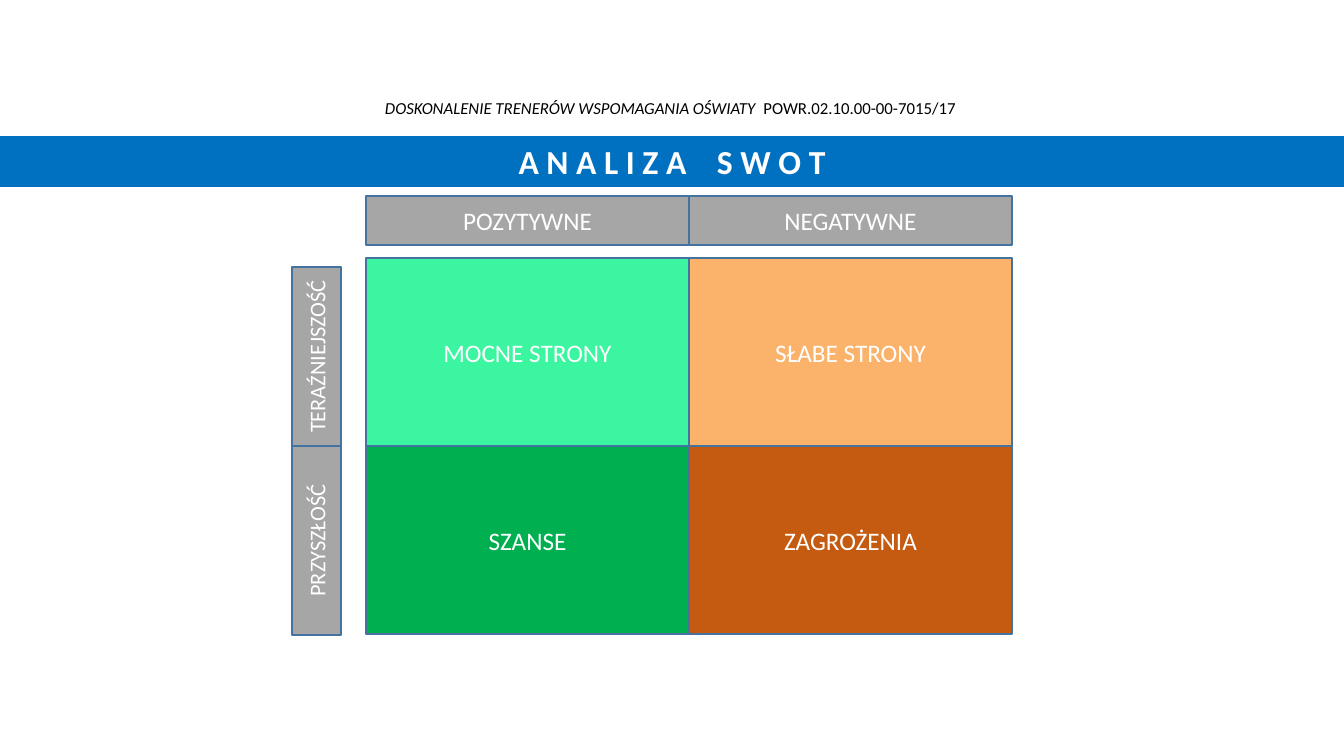
from pptx import Presentation, util as u
from pptx.dml.color import RGBColor
from pptx.enum import shapes, text

WHITE = RGBColor(0xFF, 0xFF, 0xFF)
BLACK = RGBColor(0, 0, 0)
BLUE = RGBColor(0x00, 0x70, 0xC0)
OUTLINE = RGBColor(0x43, 0x73, 0x9E)
GREY = RGBColor(0xA6, 0xA6, 0xA6)
MINT = RGBColor(0x3B, 0xF5, 0xA1)
GREEN = RGBColor(0x00, 0xB0, 0x50)
PEACH = RGBColor(0xFB, 0xB3, 0x6B)
RUST = RGBColor(0xC5, 0x5A, 0x11)

FONT = "Calibri"
PROJECT = [
    ("DOSKONALENIE TRENERÓW WSPOMAGANIA OŚWIATY", {"italic": True}),
    (" ", {"spacing": 2.7}),
    ("POWR.02.10.00-00-7015/17", {}),
]
HEADING = [
    ("A N A L I Z A", {"bold": True}),
    (" ", {"bold": True, "spacing": 16.3}),
    ("S W O T", {"bold": True}),
]
EFFECTS = ["POZYTYWNE", "NEGATYWNE"]
PERIODS = [("TERAŹNIEJSZOŚĆ", 267, 179), ("PRZYSZŁOŚĆ", 446, 189)]
QUADRANTS = [
    [("MOCNE STRONY", MINT), ("SŁABE STRONY", PEACH)],
    [("SZANSE", GREEN), ("ZAGROŻENIA", RUST)],
]

SLIDE_W, SLIDE_H = 1344, 756
GRID_X, GRID_Y, CELL_W, CELL_H = 366, 258, 323, 188
EFFECT_Y, PERIOD_X, BAND = 196, 292, 49


def px(length):
    return u.Emu(round(length * 914400 / 100.8))


def write(frame, runs, size, color, anchor):
    frame.word_wrap = True
    frame.vertical_anchor = anchor
    line = frame.paragraphs[0]
    line.alignment = text.PP_ALIGN.CENTER
    for words, style in runs:
        run = line.add_run()
        run.text = words
        run.font.name = FONT
        run.font.size = u.Pt(size)
        run.font.color.rgb = color
        run.font.bold = style.get("bold", False)
        run.font.italic = style.get("italic", False)
        if "spacing" in style:
            run.font._element.set("spc", str(round(style["spacing"] * 100)))


def block(slide, x, y, w, h, fill, runs, size=18, outline=OUTLINE,
          anchor=text.MSO_ANCHOR.MIDDLE, rotation=0):
    rect = slide.shapes.add_shape(
        shapes.MSO_SHAPE.RECTANGLE, px(x), px(y), px(w), px(h))
    rect.shadow.inherit = False
    rect.rotation = rotation
    rect.fill.solid()
    rect.fill.fore_color.rgb = fill
    if outline is None:
        rect.line.fill.background()
    else:
        rect.line.color.rgb = outline
        rect.line.width = u.Pt(1)
    write(rect.text_frame, runs, size, WHITE, anchor)


def main():
    deck = Presentation()
    deck.slide_width, deck.slide_height = px(SLIDE_W), px(SLIDE_H)
    slide = deck.slides.add_slide(deck.slide_layouts[6])

    project = slide.shapes.add_textbox(px(93), px(0), px(1155), px(123))
    write(project.text_frame, PROJECT, 12, BLACK, text.MSO_ANCHOR.BOTTOM)

    for row, quadrants in enumerate(QUADRANTS):
        for col, (label, fill) in enumerate(quadrants):
            block(slide, GRID_X + col * CELL_W, GRID_Y + row * CELL_H,
                  CELL_W, CELL_H, fill, [(label, {})])

    for col, label in enumerate(EFFECTS):
        block(slide, GRID_X + col * CELL_W, EFFECT_Y, CELL_W, BAND,
              GREY, [(label, {})])

    for label, top, length in PERIODS:
        block(slide, PERIOD_X + (BAND - length) / 2, top + (length - BAND) / 2,
              length, BAND, GREY, [(label, {})], size=16, rotation=270)

    block(slide, 0, 136, SLIDE_W, 51, BLUE, HEADING, size=24,
          outline=None, anchor=text.MSO_ANCHOR.TOP)
    deck.save("out.pptx")


if __name__ == "__main__":
    main()
